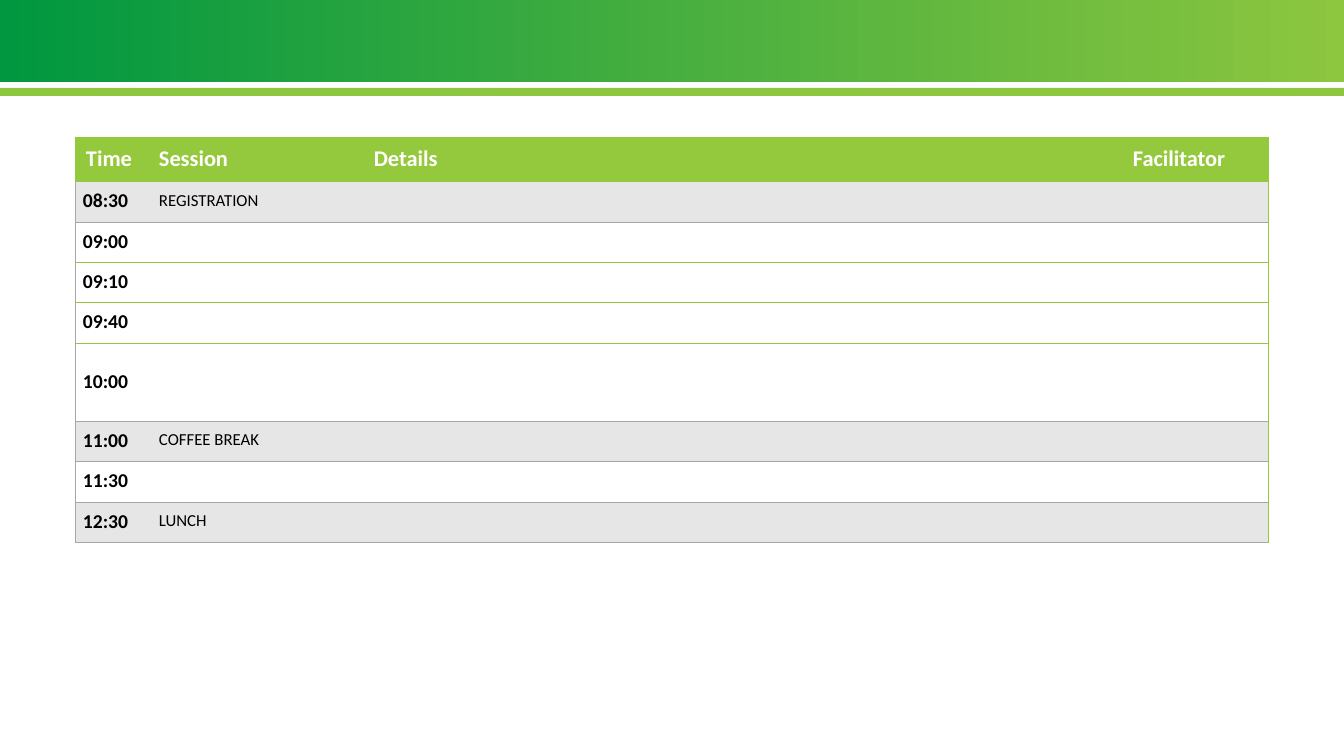
from dataclasses import dataclass

import pptx
import pptx.dml.color
import pptx.enum.shapes
import pptx.enum.text
import pptx.oxml
import pptx.oxml.ns
import pptx.util
from lxml import etree

EMU_PER_PX = 12192000 / 1344
FONT = "Calibri"
COLORS = {
    "deep_green": "009740",
    "mid_green": "78BF3F",
    "light_green": "8DC63F",
    "table_green": "95C93D",
    "break_grey": "E6E6E7",
    "line_grey": "A6A6A6",
    "white": "FFFFFF",
    "black": "000000",
}


@dataclass
class Band:
    top: int
    height: int
    stops: list[tuple[int, str]]  # percent and colour name


@dataclass
class Heading:
    label: str
    width: int
    indent: int = 8


@dataclass
class Session:
    time: str
    title: str = ""
    height: int = 40

    @property
    def is_break(self) -> bool:
        return bool(self.title)


BANDS = [
    Band(0, 82, [(0, "deep_green"), (85, "mid_green"), (100, "light_green")]),
    Band(88, 8, [(0, "light_green")]),
]
HEADINGS = [
    Heading("Time", 76, indent=11),
    Heading("Session", 215),
    Heading("Details", 759),
    Heading("Facilitator", 143),
]
SESSIONS = [
    Session("08:30", "REGISTRATION"),
    Session("09:00"),
    Session("09:10"),
    Session("09:40"),
    Session("10:00", height=78),
    Session("11:00", "COFFEE BREAK"),
    Session("11:30"),
    Session("12:30", "LUNCH"),
]
HEADER_HEIGHT = 44


def px(length: int) -> pptx.util.Emu:
    return pptx.util.Emu(round(length * EMU_PER_PX))


def rgb(color: str) -> pptx.dml.color.RGBColor:
    return pptx.dml.color.RGBColor.from_string(COLORS[color])


def add_child(parent, tag: str, **attributes: str):
    return etree.SubElement(parent, pptx.oxml.ns.qn(tag), **attributes)


def draw_band(slide, band: Band) -> None:
    bar = slide.shapes.add_shape(
        pptx.enum.shapes.MSO_SHAPE.RECTANGLE, 0, px(band.top), px(1344), px(band.height))
    bar.shadow.inherit = False
    bar.line.fill.background()
    if len(band.stops) == 1:
        bar.fill.solid()
        bar.fill.fore_color.rgb = rgb(band.stops[0][1])
        return
    bar.fill.gradient()
    bar.fill.gradient_angle = 0
    stop_list = bar._element.spPr.find(".//" + pptx.oxml.ns.qn("a:gsLst"))
    for old_stop in list(stop_list):
        stop_list.remove(old_stop)
    for percent, color in band.stops:
        stop = add_child(stop_list, "a:gs", pos=str(percent * 1000))
        add_child(stop, "a:srgbClr", val=COLORS[color])


def set_borders(cell, left: str, right: str, top: str, bottom: str) -> None:
    """Draw the four sides; an empty colour name means no line."""
    properties = cell._tc.get_or_add_tcPr()
    for side, color in zip("LRTB", (left, right, top, bottom)):
        line = add_child(properties, f"a:ln{side}", w=str(pptx.util.Pt(0.5)))
        if color:
            fill = add_child(line, "a:solidFill")
            add_child(fill, "a:srgbClr", val=COLORS[color])
        else:
            add_child(line, "a:noFill")


def fill_cell(cell, text: str, size: int, bold: bool, ink: str, fill: str,
              indent: int = 8) -> None:
    cell.fill.solid()
    cell.fill.fore_color.rgb = rgb(fill)
    cell.vertical_anchor = pptx.enum.text.MSO_ANCHOR.MIDDLE
    cell.margin_left, cell.margin_right = px(indent), px(8)
    cell.margin_top, cell.margin_bottom = px(4), px(9)
    paragraph = cell.text_frame.paragraphs[0]
    if not text:
        add_child(paragraph._p, "a:endParaRPr", sz=str(size * 100))
        return
    paragraph.line_spacing = 1.15
    run = paragraph.add_run()
    run.text = text
    run.font.name = FONT
    run.font.size = pptx.util.Pt(size)
    run.font.bold = bold
    run.font.color.rgb = rgb(ink)


def line_below(row: int) -> str:
    """Lines that touch a break are grey, the others green."""
    return "line_grey" if any(s.is_break for s in SESSIONS[row:row + 2]) else "table_green"


def draw_agenda(slide) -> None:
    heights = [HEADER_HEIGHT] + [session.height for session in SESSIONS]
    widths = [heading.width for heading in HEADINGS]
    agenda = slide.shapes.add_table(
        len(heights), len(widths), px(75), px(137), px(sum(widths)), px(sum(heights))).table
    agenda.first_row = agenda.horz_banding = False
    for row, height in zip(agenda.rows, heights):
        row.height = px(height)
    last = len(HEADINGS) - 1

    # Header row
    for column, heading in enumerate(HEADINGS):
        agenda.columns[column].width = px(heading.width)
        cell = agenda.cell(0, column)
        set_borders(cell, "" if column else "table_green",
                    "table_green" if column == last else "", "table_green", "table_green")
        fill_cell(cell, heading.label, 16, True, "white", "table_green", heading.indent)

    # Sessions
    for row, session in enumerate(SESSIONS):
        above = line_below(row - 1) if row else "table_green"
        fill = "break_grey" if session.is_break else "white"
        for column in range(len(HEADINGS)):
            cell = agenda.cell(row + 1, column)
            set_borders(cell, "" if column else "line_grey",
                        "table_green" if column == last else "", above, line_below(row))
            text = (session.time, session.title, "", "")[column]
            fill_cell(cell, text, 12 if column else 14, column == 0, "black", fill)


def main() -> None:
    deck = pptx.Presentation()
    deck.slide_width, deck.slide_height = px(1344), px(756)
    slide = deck.slides.add_slide(deck.slide_layouts[6])
    for band in BANDS:
        draw_band(slide, band)
    draw_agenda(slide)
    deck.save("out.pptx")


if __name__ == "__main__":
    main()
